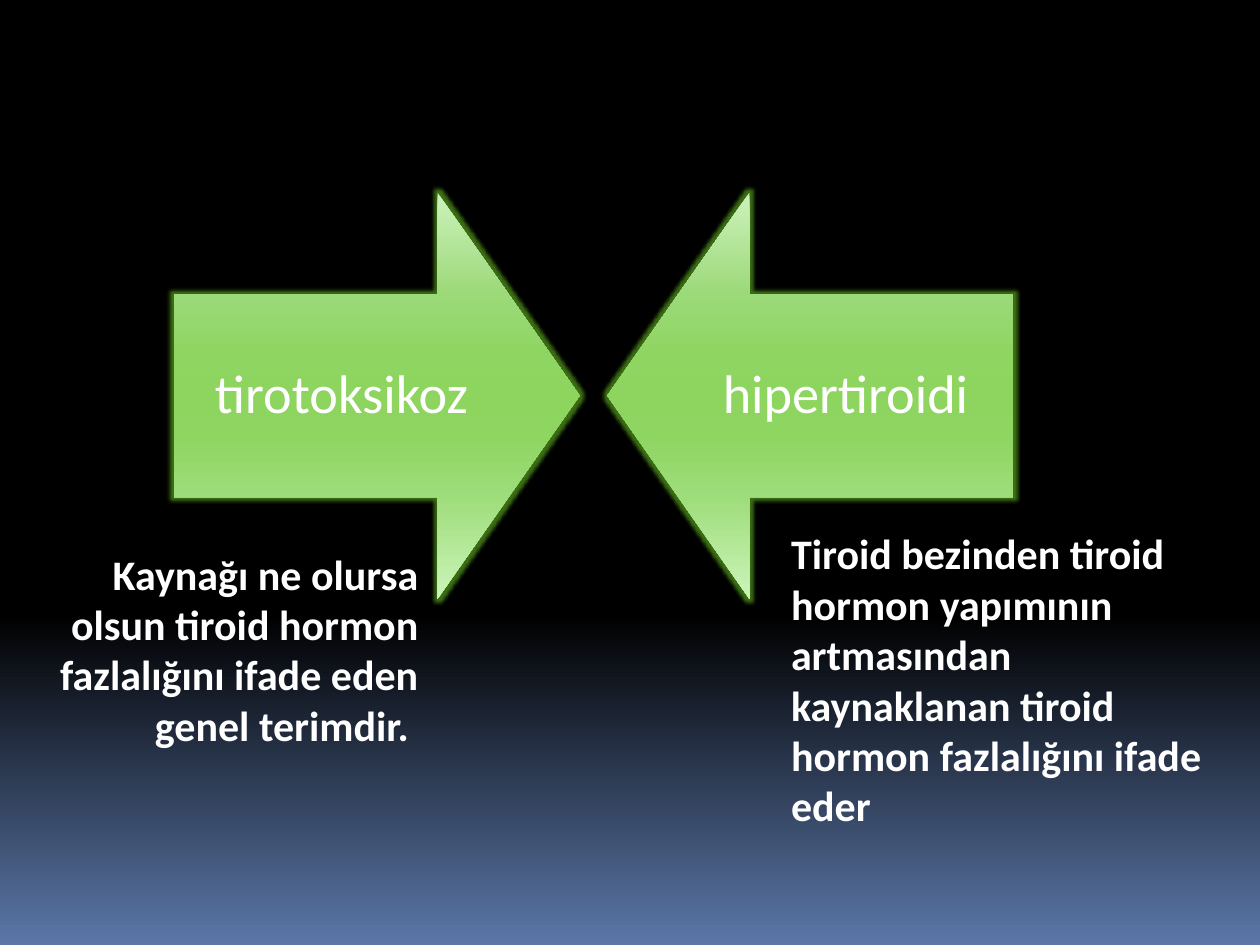
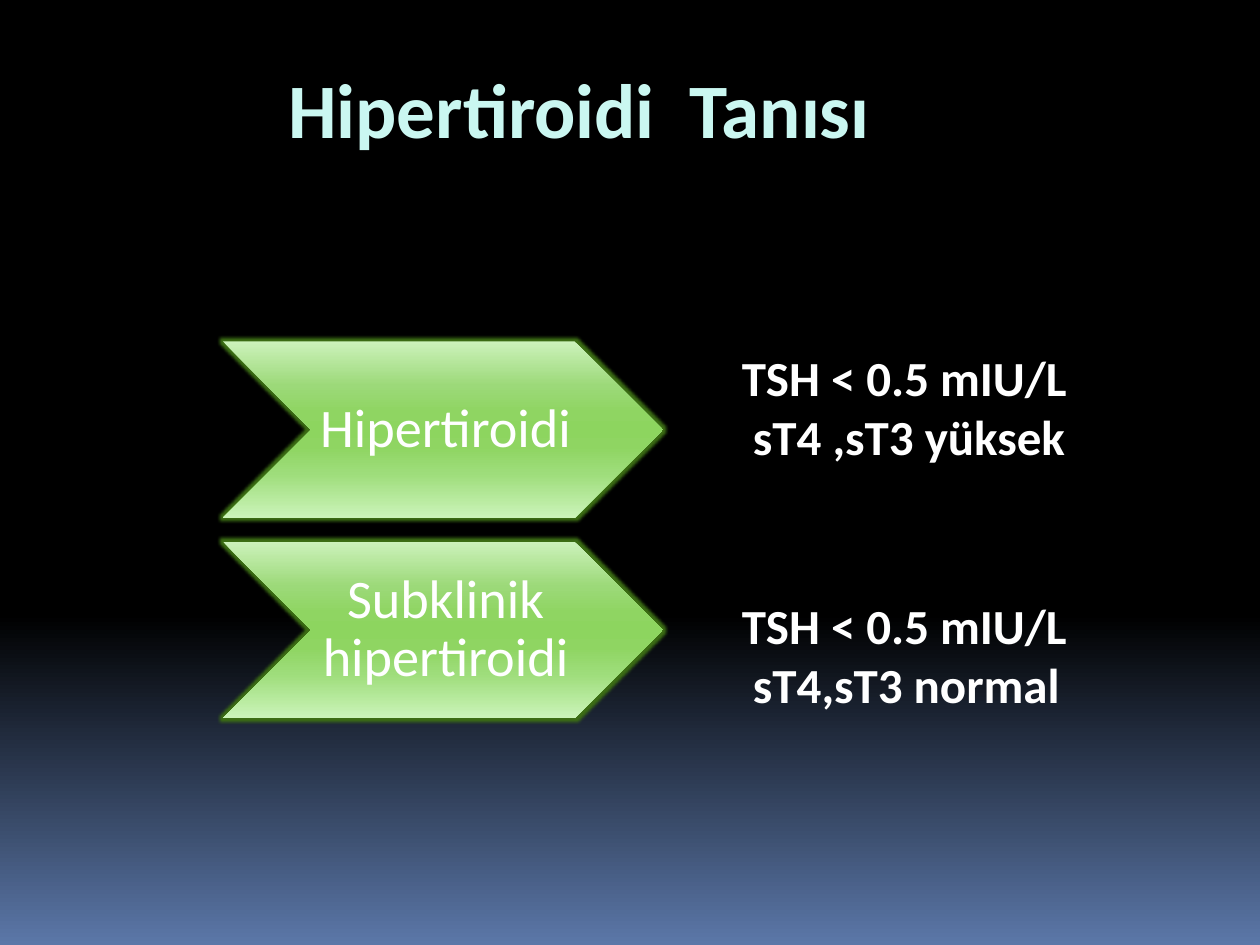
from lxml import etree
from pptx import Presentation
from pptx.dml.color import RGBColor
from pptx.enum.shapes import MSO_SHAPE as SHAPE
from pptx.enum.text import MSO_ANCHOR as ANCHOR, PP_ALIGN as ALIGN
from pptx.oxml import parse_xml
from pptx.oxml.ns import nsdecls, qn
from pptx.util import Inches, Pt

FONT = "Calibri"
WHITE = RGBColor(0xFF, 0xFF, 0xFF)
AQUA = RGBColor(0xCA, 0xF7, 0xF1)
BLACK = RGBColor(0x00, 0x00, 0x00)
BLUE = RGBColor(0x5B, 0x77, 0xA8)
GLOW = RGBColor(0x3C, 0x6E, 0x14)
NIGHT = [(0, BLACK), (65, BLACK), (100, BLUE)]
GREEN = [(0, RGBColor(0xCC, 0xF2, 0xBB)), (25, RGBColor(0x9C, 0xD9, 0x79)),
         (40, RGBColor(0x8F, 0xD5, 0x62)), (50, RGBColor(0x8D, 0xD5, 0x5F)),
         (60, RGBColor(0x8F, 0xD5, 0x62)), (75, RGBColor(0x9E, 0xDD, 0x7B)),
         (100, RGBColor(0xCB, 0xF4, 0xB9))]


def paint(owner, fill, stops):
    """Fill a shape or slide background with a top-to-bottom gradient."""
    fill.gradient()
    fill.gradient_angle = 270
    gs_list = owner._element.xpath(".//a:gsLst")[0]
    for gs in list(gs_list):
        gs_list.remove(gs)
    for pos, color in stops:
        gs = etree.SubElement(gs_list, qn("a:gs"), pos=str(pos * 1000))
        etree.SubElement(gs, qn("a:srgbClr"), val=str(color))


def write(s, box, lines, size, color=WHITE, bold=True, align=ALIGN.LEFT, inset=None):
    """Add a text box; an inset (left, top, right, bottom) marks a centred arrow label."""
    tf = s.shapes.add_textbox(*map(Inches, box)).text_frame
    tf.word_wrap = True
    tf.text = lines
    if inset:
        tf.vertical_anchor = ANCHOR.MIDDLE
        tf.margin_left, tf.margin_top, tf.margin_right, tf.margin_bottom = map(Inches, inset)
    for p in tf.paragraphs:
        p.alignment = align
        if inset:
            p.line_spacing = 0.9
        for r in p.runs:
            r.font.name, r.font.size, r.font.bold = FONT, Pt(size), bold
            r.font.color.rgb = color


prs = Presentation()
prs.slide_width, prs.slide_height = Inches(10), Inches(7.5)
terms, diagnosis = [prs.slides.add_slide(prs.slide_layouts[6]) for _ in range(2)]
for s in (terms, diagnosis):
    paint(s, s.background.fill, NIGHT)

# Two arrows facing each other, and two chevrons stacked
ARROW, ARROW_LEFT, ARROW_TOP, ARROW_GAP = 3.22, 1.38, 1.53, 0.22
LABEL_W = 2.66
CHEVRON_W, CHEVRON_H, CHEVRON_LEFT, CHEVRON_TOP, CHEVRON_GAP = 3.49, 1.4, 1.77, 2.71, 0.19
arrow_right = ARROW_LEFT + ARROW + ARROW_GAP
ARROW_INSET, CHEVRON_INSET = (0.24,) * 4, (0.04, 0.02, 0, 0.02)

figures = []
for kind, left, label_left, label in [
        (SHAPE.RIGHT_ARROW, ARROW_LEFT, ARROW_LEFT, "tirotoksikoz"),
        (SHAPE.LEFT_ARROW, arrow_right, arrow_right + ARROW - LABEL_W, "hipertiroidi")]:
    figures.append((terms, kind, (left, ARROW_TOP, ARROW, ARROW), (0.5, 0.35), label,
                    (label_left, ARROW_TOP + ARROW / 4, LABEL_W, ARROW / 2), ARROW_INSET))
for row, label in enumerate(["Hipertiroidi", "Subklinik hipertiroidi"]):
    top = CHEVRON_TOP + row * (CHEVRON_H + CHEVRON_GAP)
    figures.append((diagnosis, SHAPE.CHEVRON, (CHEVRON_LEFT, top, CHEVRON_W, CHEVRON_H),
                    (0.5,), label,
                    (CHEVRON_LEFT + CHEVRON_H / 2, top, CHEVRON_W - CHEVRON_H, CHEVRON_H),
                    CHEVRON_INSET))

for s, kind, box, adjustments, label, label_box, inset in figures:
    sp = s.shapes.add_shape(kind, *map(Inches, box))
    for i, value in enumerate(adjustments):
        sp.adjustments[i] = value
    paint(sp, sp.fill, GREEN)
    sp.line.fill.background()
    sp.shadow.inherit = False
    sp._element.spPr.find(qn("a:effectLst")).append(parse_xml(
        f'<a:glow {nsdecls("a")} rad="50800"><a:srgbClr val="{GLOW}"/></a:glow>'))
    write(s, label_box, label, 31, bold=False, align=ALIGN.CENTER, inset=inset)

# Definitions under the arrows
write(terms, (6.18, 4.14, 3.46, 2.93),
      "Tiroid bezinden tiroid hormon yapımının artmasından kaynaklanan tiroid "
      "hormon fazlalığını ifade eder", 24)
write(terms, (0.16, 4.3, 3.26, 1.72),
      "Kaynağı ne olursa olsun tiroid hormon fazlalığını ifade eden genel terimdir. ",
      24, align=ALIGN.RIGHT)

# Title and laboratory findings beside the chevrons
write(diagnosis, (2.19, 0.44, 5, 1.58), "Hipertiroidi  Tanısı", 44, AQUA)
for top, hormones in [(2.71, " sT4 ,sT3 yüksek"), (4.68, " sT4,sT3 normal")]:
    write(diagnosis, (5.79, top, 3.01, 1.04), f"TSH < 0.5 mIU/L\n{hormones}", 28)

prs.save("out.pptx")
